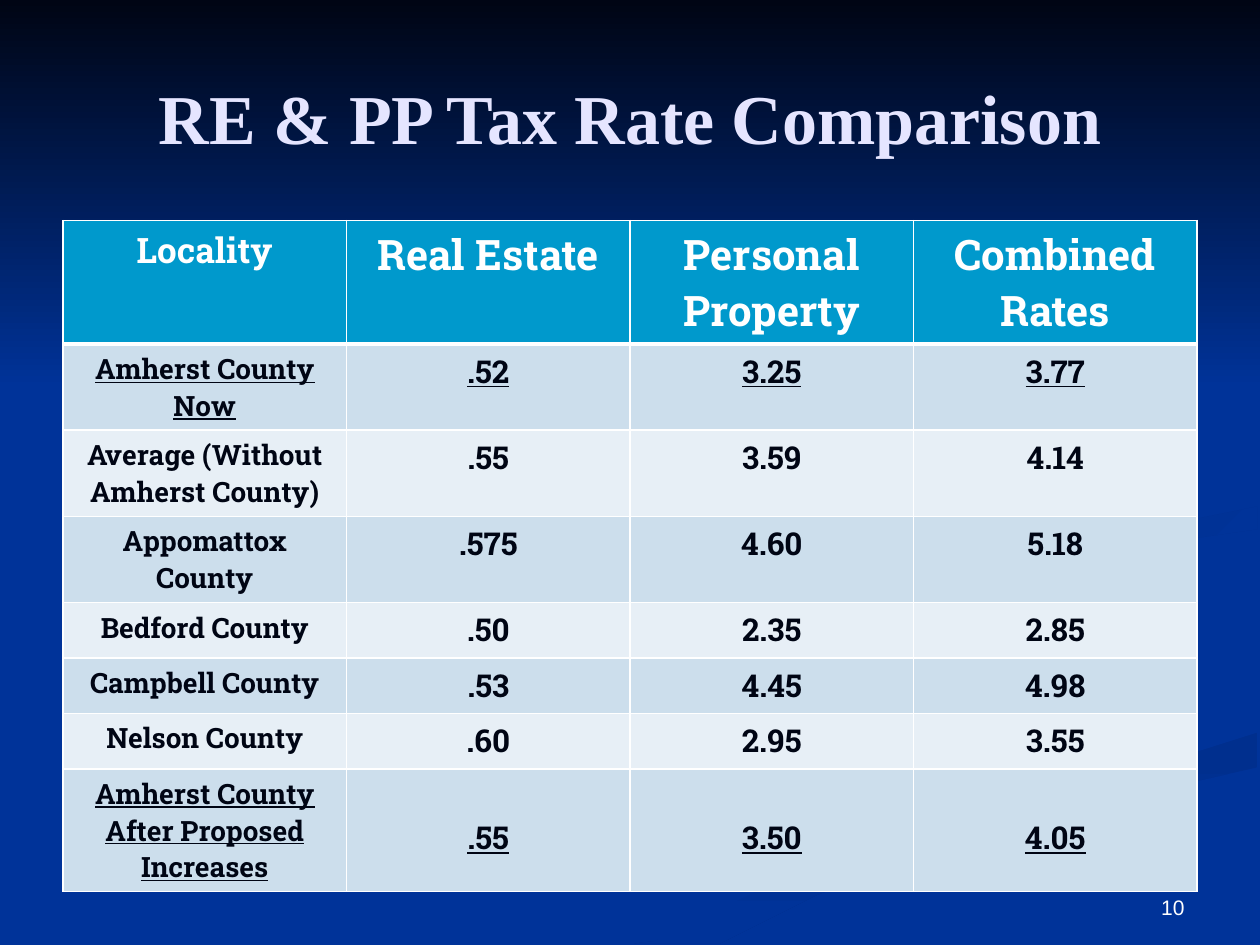
import pptx
import pptx.dml.color
import pptx.enum.shapes
import pptx.enum.text
import pptx.oxml
import pptx.oxml.ns
import pptx.util

Inches, Pt = pptx.util.Inches, pptx.util.Pt
RGB = pptx.dml.color.RGBColor
Align, Anchor = pptx.enum.text.PP_ALIGN, pptx.enum.text.MSO_ANCHOR

BLUE = RGB(0x00, 0x33, 0x99)
SHADE = RGB(0x00, 0x2F, 0x8E)
TINT = RGB(0x00, 0x31, 0x93)
NIGHT = RGB(0x00, 0x05, 0x14)
LILAC = RGB(0xE5, 0xE5, 0xFF)
WHITE = RGB(0xFF, 0xFF, 0xFF)
HEAD = RGB(0x00, 0x99, 0xCC)
BANDS = [RGB(0xCC, 0xDE, 0xEC), RGB(0xE7, 0xEF, 0xF6)]

ROWS = [
    ["Locality", "Real Estate", "Personal Property", "Combined Rates"],
    ["Amherst County Now", ".52", "3.25", "3.77"],
    ["Average (Without Amherst County)", ".55", "3.59", "4.14"],
    ["Appomattox County", ".575", "4.60", "5.18"],
    ["Bedford County", ".50", "2.35", "2.85"],
    ["Campbell County", ".53", "4.45", "4.98"],
    ["Nelson County", ".60", "2.95", "3.55"],
    ["Amherst County After Proposed Increases", ".55", "3.50", "4.05"],
]
HEIGHTS = [0.97] + [0.68] * 3 + [0.44] * 3 + [0.97]

# Each swirl: start colour, end colour, angle, outline in hundredths of an inch
SWIRLS = [
    (BLUE, TINT, 0, [
        (781, 553), (731, 533), (642, 507), (594, 485), (574, 464), (575, 459),
        (570, 468), (581, 484), (611, 499), (679, 519), (741, 539), (781, 556),
        (786, 566), (774, 583), (727, 602), (652, 620), (539, 649), (417, 690),
        (300, 749), (361, 749), (466, 700), (564, 665), (676, 634), (769, 609),
        (797, 588), (799, 573)]),
    (BLUE, TINT, 315, [
        (943, 570), (930, 553), (888, 535), (792, 509), (745, 490), (724, 464),
        (730, 484), (766, 512), (838, 536), (900, 557), (918, 581), (894, 605),
        (932, 589)]),
    (SHADE, BLUE, 270, [
        (519, 747), (503, 749), (571, 749), (649, 710), (752, 672), (861, 640),
        (998, 609), (998, 581), (920, 606), (764, 647), (630, 693), (569, 719)]),
    (BLUE, BLUE, 0, [
        (725, 464), (734, 483), (793, 509), (889, 535), (931, 553), (943, 570),
        (931, 590), (881, 608), (743, 643), (619, 684), (477, 749), (519, 747),
        (630, 693), (765, 647), (920, 606), (999, 581), (999, 538), (904, 519),
        (817, 492), (781, 463), (800, 442), (865, 424), (968, 409), (999, 402),
        (999, 387), (920, 401), (788, 422), (732, 446)]),
    (TINT, BLUE, 315, [
        (781, 460), (786, 474), (826, 496), (805, 476), (816, 459), (859, 443),
        (936, 429), (998, 420), (998, 402), (933, 415), (835, 430), (791, 447)]),
    (SHADE, BLUE, 315, [
        (683, 430), (786, 412), (855, 391), (889, 362), (893, 335), (873, 299),
        (821, 261), (762, 233), (846, 279), (885, 320), (886, 348), (861, 370),
        (791, 392), (676, 414), (605, 433), (577, 462), (590, 484), (622, 500),
        (593, 470), (614, 448)]),
]


def put(item, values):
    for name, value in values.items():
        setattr(item, name, value)


def write(frame, text, size, face, color, align=Align.CENTER, **marks):
    frame.text = text
    para = frame.paragraphs[0]
    para.alignment = align
    font = para.runs[0].font
    put(font, {"size": Pt(size), "name": face, **marks})
    font.color.rgb = color


def blend(shape, first, last, angle):
    """Fill a plain shape with a two-colour gradient."""
    shape.shadow.inherit = False
    shape.line.fill.background()
    shape.fill.gradient()
    shape.fill.gradient_angle = angle
    for stop, color, spot in zip(shape.fill.gradient_stops, (first, last), (0, 1)):
        stop.color.rgb = color
        stop.position = spot


def add_scene(slide, left, top, width):
    """Draw the swirls and the dark band across the top."""
    slide.background.fill.solid()
    slide.background.fill.fore_color.rgb = BLUE
    for first, last, angle, points in SWIRLS:
        pen = slide.shapes.build_freeform(*points[0], scale=Inches(0.01))
        pen.add_line_segments(points[1:])
        blend(pen.convert_to_shape(left, top), first, last, angle)
    band = slide.shapes.add_shape(
        pptx.enum.shapes.MSO_SHAPE.RECTANGLE, left, top, width, Inches(3.08))
    blend(band, NIGHT, BLUE, 270)


def add_title(slide, left, top, width, height):
    title = slide.shapes.title
    title.element.getparent().append(title.element)
    put(title, {"left": left, "top": top, "width": width, "height": height})
    put(title.text_frame, {"word_wrap": True, "vertical_anchor": Anchor.MIDDLE})
    write(title.text_frame, "RE & PP Tax Rate Comparison", 40,
          "Times New Roman", LILAC, bold=True)


def edge(cell, widths):
    """Give a cell white borders, with widths in points by side."""
    props = cell._tc.get_or_add_tcPr()
    for side, width in widths.items():
        props.append(pptx.oxml.parse_xml(
            f'<a:ln{side} {pptx.oxml.ns.nsdecls("a")} w="{Pt(width)}">'
            f'<a:solidFill><a:srgbClr val="{WHITE}"/></a:solidFill></a:ln{side}>'))


def add_rates(slide, left, top, width):
    count = len(ROWS[0])
    table = slide.shapes.add_table(
        len(ROWS), count, left, top, width, Inches(sum(HEIGHTS))).table
    for col in table.columns:
        col.width = width // count
    final = len(ROWS) - 1
    for r, (row, high) in enumerate(zip(ROWS, HEIGHTS)):
        table.rows[r].height = Inches(high)
        for c, text in enumerate(row):
            cell = table.cell(r, c)
            edge(cell, {"L": 1, "R": 1, "T": 3 if r == 1 else 1,
                        "B": 3 if r == 0 else 1})
            cell.fill.solid()
            cell.fill.fore_color.rgb = BANDS[(r - 1) % 2] if r else HEAD
            sizes = (16, 18) if r else (20, 24)
            write(cell.text_frame, text, sizes[c > 0], "Roboto Slab",
                  NIGHT if r else WHITE, bold=True, underline=r in (1, final))
            if r == final and c:
                cell.margin_top = Inches(0.38)


def add_number(slide, left, top, width, height):
    frame = slide.shapes.add_textbox(left, top, width, height).text_frame
    put(frame, {"word_wrap": True, "vertical_anchor": Anchor.BOTTOM})
    write(frame, "10", 12, "Arial", WHITE, Align.RIGHT)


def main():
    deck = pptx.Presentation()
    put(deck, {"slide_width": Inches(10), "slide_height": Inches(7.5)})
    slide = deck.slides.add_slide(deck.slide_layouts[5])
    add_scene(slide, 0, 0, deck.slide_width)
    add_title(slide, Inches(0.5), Inches(0.3), Inches(9), Inches(1.25))
    add_rates(slide, Inches(0.5), Inches(1.75), Inches(9))
    add_number(slide, Inches(7.17), Inches(6.83), Inches(2.33), Inches(0.52))
    deck.save("out.pptx")


if __name__ == "__main__":
    main()
